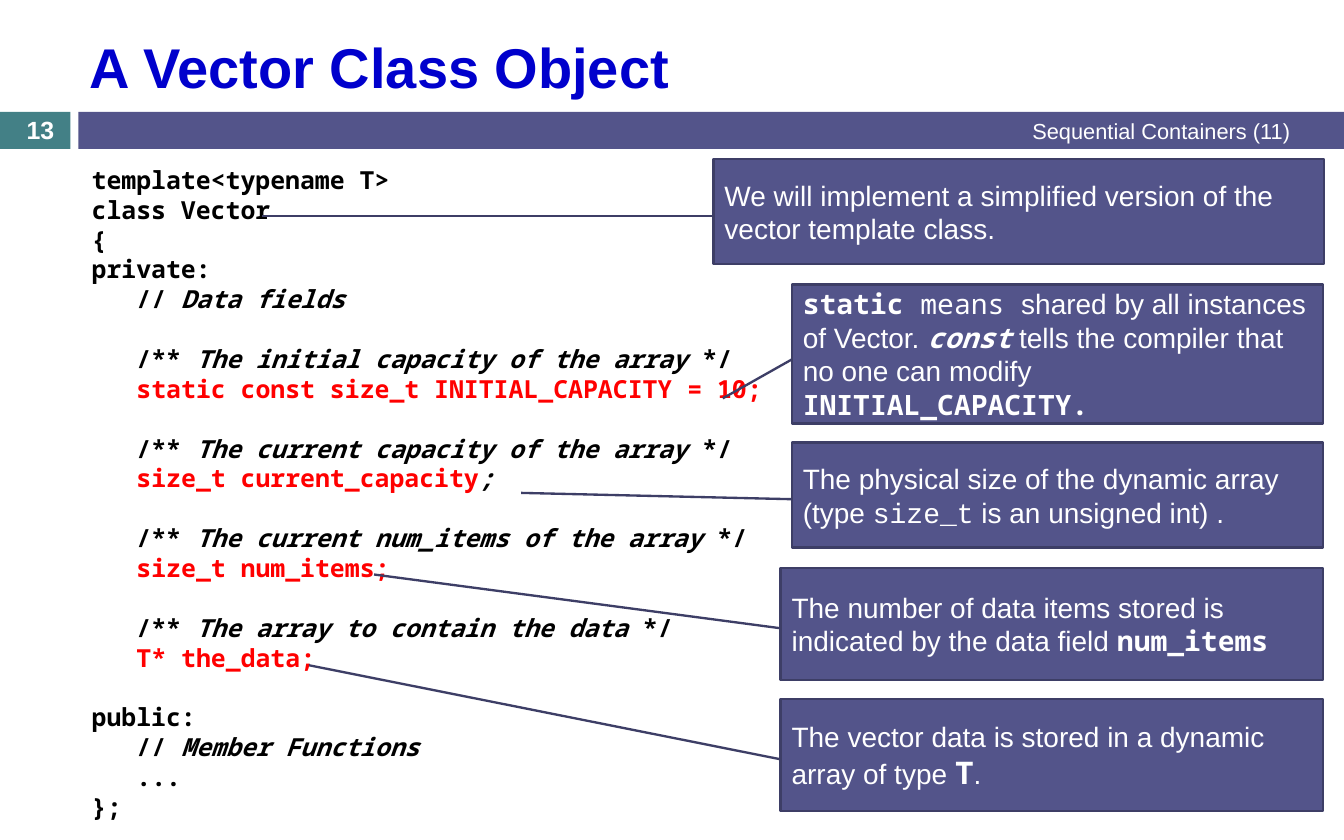
from dataclasses import dataclass
from typing import NamedTuple

from pptx import Presentation
from pptx.dml.color import RGBColor
from pptx.enum import shapes, text
from pptx.util import Inches, Pt


@dataclass(frozen=True)
class Theme:
    sans: str = "Arial"
    mono: str = "Noto Sans Mono"
    courier: str = "Courier New"
    black: str = "000000"
    white: str = "FFFFFF"
    red: str = "FF0000"
    blue: str = "0000CC"
    teal: str = "438086"
    violet: str = "53548A"
    edge: str = "3D3E66"
    title: int = 36
    big: int = 20
    note: int = 18
    code: int = 16
    head: int = 14
    gap: float = 19.2  # one line of code, in points


T = Theme()


class Run(NamedTuple):
    text: str
    font: str = T.sans
    size: int = T.note
    color: str = T.white
    bold: bool = False
    italic: bool = False


class Box(NamedTuple):
    left: float
    top: float
    width: float
    height: float

    def emu(self) -> list:
        return [Inches(v) for v in self]


class Line(NamedTuple):
    runs: list[Run]
    indent: bool = False
    gap: bool = False


class Note(NamedTuple):
    box: Box
    tip: tuple[float, float]  # end of the leader: down, across, as shares of the box
    runs: list[Run]


def code(words: str, color: str = T.black, italic: bool = False) -> Run:
    return Run(words, T.mono, T.code, color, True, italic)


def mono(words: str, size: int = T.note, bold: bool = True, italic: bool = False) -> Run:
    return Run(words, T.mono, size, T.white, bold, italic)


def remark(words: str, gap: bool = True) -> Line:
    return Line([code("/** "), code(words, italic=True), code(" */")], True, gap)


def label(words: str) -> Line:
    return Line([code("// "), code(words, italic=True)], True)


def field(words: str, *rest: Run) -> Line:
    return Line([code(words, T.red), *rest], True)


def plain(words: str, indent: bool = False, gap: bool = False) -> Line:
    return Line([code(words)], indent, gap)


CODE = [
    plain("template<typename T>"),
    plain("class Vector"),
    plain("{"),
    plain("private:"),
    label("Data fields"),
    remark("The initial capacity of the array"),
    field("static const size_t INITIAL_CAPACITY = 10;"),
    remark("The current capacity of the array"),
    field("size_t current_capacity", code(";", italic=True)),
    remark("The current num_items of the array"),
    field("size_t num_items;"),
    remark("The array to contain the data"),
    field("T* the_data;"),
    plain("public:", gap=True),
    label("Member Functions"),
    plain("...", indent=True),
    plain("};"),
]

NOTES = [
    Note(Box(6.37, 1.42, 5.45, 0.94), (0.54, -0.74), [
        Run("We will implement a simplified version of the vector template class.")]),
    Note(Box(7.07, 2.54, 4.74, 1.24), (0.82, -0.13), [
        mono("static "), mono("means ", bold=False),
        Run("shared by all instances of Vector. "), mono("const", italic=True),
        Run(" tells the compiler that no one can modify "),
        mono("INITIAL_CAPACITY.")]),
    Note(Box(7.07, 3.95, 4.74, 0.94), (0.48, -0.51), [
        Run("The physical size of the dynamic array (type "),
        Run("size_t", T.courier), Run(" is an unsigned int) .")]),
    Note(Box(6.97, 5.07, 4.84, 1), (0.06, -0.75), [
        Run("The number of data items stored is indicated by the data field "),
        mono("num_items")]),
    Note(Box(6.97, 6.24, 4.84, 1), (-0.3, -0.87), [
        Run("The vector data is stored in a dynamic array of type "),
        mono("T", T.big), Run(".")]),
]


def write(para, runs: list[Run], align=text.PP_ALIGN.LEFT) -> None:
    para.alignment = align
    for item in runs:
        run = para.add_run()
        run.text = item.text
        font = run.font
        font.name, font.size = item.font, Pt(item.size)
        font.bold, font.italic = item.bold, item.italic
        font.color.rgb = RGBColor.from_string(item.color)


def frame(shape, anchor=text.MSO_ANCHOR.MIDDLE):
    body = shape.text_frame
    body.word_wrap = True
    body.vertical_anchor = anchor
    return body


def add_text(slide, box: Box, run: Run, align=text.PP_ALIGN.LEFT) -> None:
    body = frame(slide.shapes.add_textbox(*box.emu()))
    write(body.paragraphs[0], [run], align)


def add_shape(slide, kind, box: Box, fill: str):
    shape = slide.shapes.add_shape(kind, *box.emu())
    shape.shadow.inherit = False
    shape.fill.solid()
    shape.fill.fore_color.rgb = RGBColor.from_string(fill)
    return shape


def add_bar(slide, box: Box, fill: str) -> None:
    bar = add_shape(slide, shapes.MSO_SHAPE.RECTANGLE, box, fill)
    bar.line.fill.background()


def add_code(slide, box: Box, lines: list[Line]) -> None:
    body = frame(slide.shapes.add_textbox(*box.emu()), text.MSO_ANCHOR.TOP)
    for i, line in enumerate(lines):
        para = body.add_paragraph() if i else body.paragraphs[0]
        write(para, line.runs)
        if line.gap:
            para.space_before = Pt(T.gap)
        if line.indent:
            para._p.get_or_add_pPr().set("marL", str(Inches(0.4)))


def add_note(slide, note: Note) -> None:
    shape = add_shape(slide, shapes.MSO_SHAPE.LINE_CALLOUT_1, note.box, T.violet)
    shape.line.color.rgb = RGBColor.from_string(T.edge)
    shape.line.width = Pt(1.5)
    for i, value in enumerate((0.54, 0, *note.tip)):
        shape.adjustments[i] = value
    write(frame(shape).paragraphs[0], note.runs)


def main() -> None:
    deck = Presentation()
    deck.slide_width, deck.slide_height = Inches(12), Inches(7.5)
    slide = deck.slides.add_slide(deck.slide_layouts[6])
    add_bar(slide, Box(0, 1, 0.63, 0.33), T.teal)
    add_bar(slide, Box(0.7, 1, 11.3, 0.33), T.violet)
    add_code(slide, Box(0.72, 1.42, 6.99, 6.02), CODE)
    add_text(slide, Box(0.7, 0.19, 10.91, 0.8),
             Run("A Vector Class Object", T.sans, T.title, T.blue, True))
    add_text(slide, Box(6.17, 1, 5.45, 0.33),
             Run("Sequential Containers (11)", size=T.head), text.PP_ALIGN.RIGHT)
    add_text(slide, Box(0, 1.01, 0.72, 0.3),
             Run("13", size=T.code, bold=True), text.PP_ALIGN.CENTER)
    for note in NOTES:
        add_note(slide, note)
    deck.save("out.pptx")


if __name__ == "__main__":
    main()
